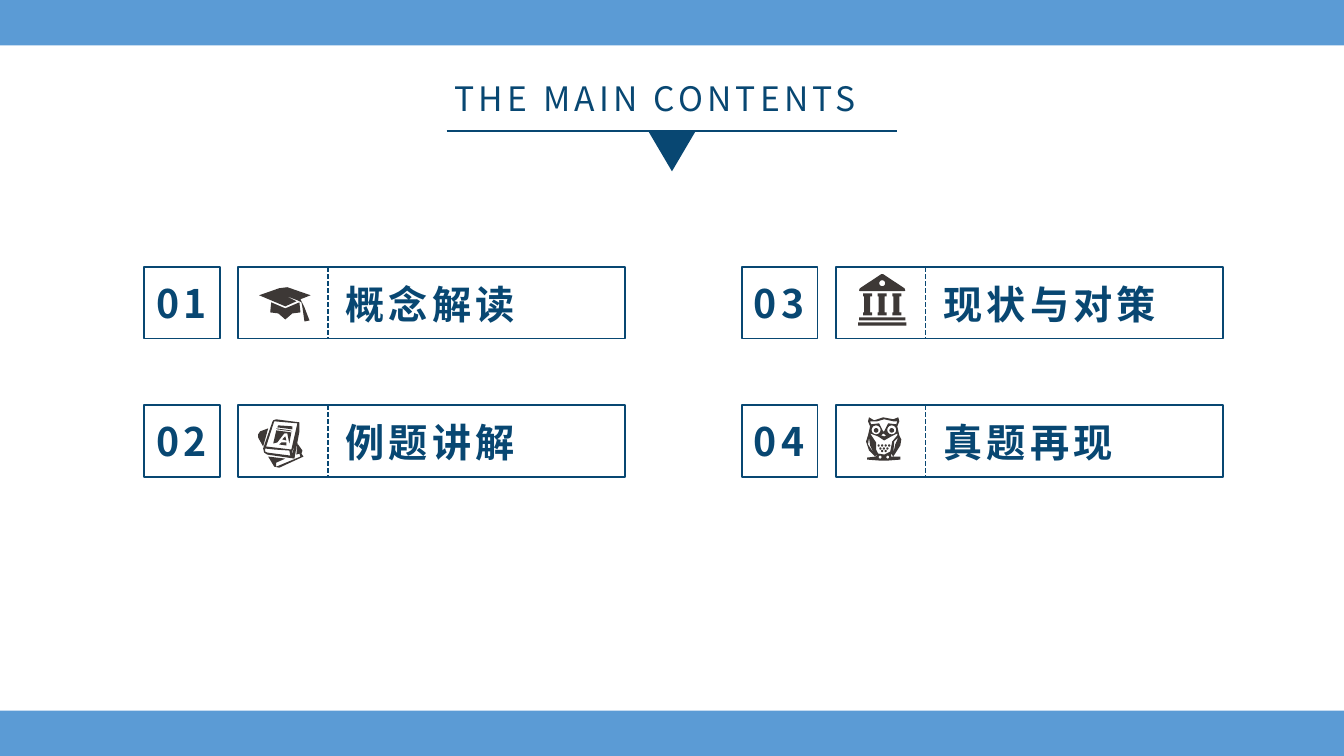
from dataclasses import dataclass
from math import cos, pi, sin

from lxml.etree import SubElement
from pptx import Presentation
from pptx.dml.color import RGBColor
from pptx.enum.dml import MSO_LINE
from pptx.enum.shapes import MSO_CONNECTOR, MSO_SHAPE
from pptx.enum.text import MSO_ANCHOR, MSO_AUTO_SIZE, PP_ALIGN
from pptx.oxml.ns import qn
from pptx.util import Inches, Pt


@dataclass(frozen=True)
class Theme:
    """Colours, font and sizes of the deck."""
    band: RGBColor = RGBColor.from_string("5B9BD5")
    navy: RGBColor = RGBColor.from_string("084772")
    icon: RGBColor = RGBColor.from_string("3D3836")
    font: str = "Noto Sans CJK SC"
    title_size: int = 24
    item_size: int = 28
    letter_spacing: int = 300
    rule: float = 1.5
    outline: float = 1.25


class Board:
    """Draws on one page divided into 100 columns and 100 rows."""

    def __init__(self, deck, page, theme):
        """Keep the page, its grid steps and its theme."""
        self.page, self.theme = page, theme
        self.column, self.row = deck.slide_width / 100, deck.slide_height / 100

    def place(self, *cells):
        """Turn alternating columns and rows into lengths."""
        steps = (self.column, self.row) * 2
        return [round(cell * step) for cell, step in zip(cells, steps)]

    def set_text(self, box, text, size, bold=False):
        """Put one styled line of text into a box."""
        frame = box.text_frame
        frame.word_wrap = True
        frame.auto_size = MSO_AUTO_SIZE.NONE
        frame.vertical_anchor = MSO_ANCHOR.TOP
        para = frame.paragraphs[0]
        para.alignment = PP_ALIGN.LEFT
        span = para.add_run()
        span.text = text
        for font in (para.font, span.font):
            font.name, font.size, font.bold = self.theme.font, Pt(size), bold
            font.color.rgb = self.theme.navy
        for properties in para._p.iter(qn("a:defRPr"), qn("a:rPr")):
            properties.set("spc", str(self.theme.letter_spacing))
            SubElement(properties, qn("a:ea"), typeface=self.theme.font)

    def title(self, text, *cells):
        """Place and fill the title placeholder."""
        box = self.page.shapes.title
        box.left, box.top, box.width, box.height = self.place(*cells)
        self.set_text(box, text, self.theme.title_size)

    def label(self, text, *cells):
        """Add a bold text box."""
        box = self.page.shapes.add_textbox(*self.place(*cells))
        self.set_text(box, text, self.theme.item_size, bold=True)

    def solid(self, kind, color, *cells):
        """Add a filled shape without an outline."""
        shape = self.page.shapes.add_shape(kind, *self.place(*cells))
        self.paint(shape, color)
        return shape

    def paint(self, shape, color):
        """Fill a shape and drop its line and shadow."""
        shape.shadow.inherit = False
        shape.fill.solid()
        shape.fill.fore_color.rgb = color
        shape.line.fill.background()

    def frame(self, *cells):
        """Add an outlined rectangle without a fill."""
        box = self.page.shapes.add_shape(MSO_SHAPE.RECTANGLE, *self.place(*cells))
        box.shadow.inherit = False
        box.fill.background()
        box.line.color.rgb = self.theme.navy
        box.line.width = Pt(self.theme.outline)

    def line(self, width, *cells, dash=None):
        """Add a straight line between two grid points."""
        line = self.page.shapes.add_connector(MSO_CONNECTOR.STRAIGHT, *self.place(*cells))
        line.line.color.rgb = self.theme.navy
        line.line.width = Pt(width)
        if dash:
            line.line.dash_style = dash
        SubElement(line._element.spPr, qn("a:effectLst"))

    def icon(self, contours, left, top):
        """Add an icon whose points are hundredths of an inch."""
        fine = [[(x * 10, y * 10) for x, y in contour] for contour in contours]
        builder = self.page.shapes.build_freeform(*fine[0][0], scale=Inches(1) / 1000)
        builder.add_line_segments(fine[0][1:])
        for contour in fine[1:]:
            builder.move_to(*contour[0])
            builder.add_line_segments(contour[1:])
        self.paint(builder.convert_to_shape(*self.place(left, top)), self.theme.icon)


def dot(x, y, radius):
    """Return a round contour."""
    return [(x + radius * cos(k * pi / 6), y + radius * sin(k * pi / 6)) for k in range(12)]


def bar(left, top, right, bottom):
    """Return a rectangular contour."""
    return [(left, top), (right, top), (right, bottom), (left, bottom)]


def pillar(x):
    """Return the contour of a column with its capital and foot."""
    profile = [(0, 19), (9, 19), (9, 22), (7, 22), (7, 38), (9, 38),
               (9, 41), (0, 41), (0, 38), (1, 38), (1, 22), (0, 22)]
    return [(x + across, down) for across, down in profile]


CAP = [
    [(20, 2), (28, 1), (51, 9), (41, 13), (45, 21), (50, 34), (45, 35), (43, 21),
     (42, 16), (38, 14), (25, 9), (37, 15), (26, 20), (0, 9)],
    [(12, 16), (11, 26), (19, 27), (26, 33), (33, 27), (41, 26), (40, 16), (26, 22)],
]
BOOKS = [
    [(15, 4), (16, 2), (19, 1), (42, 4), (42, 13), (37, 40), (10, 36), (7, 34), (6, 30)],
    [(17, 3), (9, 28), (34, 31), (40, 5)],
    [(37, 25), (35, 33), (35, 37)],
    [(8, 30), (8, 33), (10, 34), (33, 37), (32, 32), (17, 31)],
    [(21, 7), (20, 9), (35, 11), (35, 8)],
    [(19, 10), (20, 11), (35, 13), (33, 12)],
    [(1, 16), (1, 19), (6, 28), (11, 10), (3, 13)],
    [(16, 25), (20, 24), (27, 15), (30, 15), (32, 25), (34, 14), (19, 12)],
    [(28, 18), (25, 21), (29, 22)],
    [(22, 26), (29, 27), (29, 24), (24, 24)],
    [(40, 25), (39, 36), (42, 35), (43, 38), (19, 48), (19, 44), (28, 40),
     (11, 38), (17, 48), (22, 49), (46, 38), (44, 35), (45, 32)],
]
BANK = [
    bar(0, 48, 48, 51), bar(1, 43, 47, 46),
    [(1, 16), (2, 14), (23, 0), (25, 0), (46, 14), (47, 16), (46, 17), (2, 17)],
    dot(24, 9, 3), *[pillar(5 + 14.5 * k) for k in range(3)],
]
OWL = [
    [(4, 0), (9, 3), (18, 0), (28, 2), (33, 0), (34, 4), (32, 9), (34, 18), (36, 22),
     (35, 28), (28, 39), (26, 36), (26, 39), (35, 39), (35, 42), (22, 43), (15, 43),
     (2, 42), (2, 40), (11, 39), (12, 36), (10, 39), (4, 33), (1, 24), (3, 18), (5, 9), (3, 4)],
    [(5, 4), (6, 7), (14, 6), (18, 14), (19, 14), (23, 6), (31, 7), (32, 4),
     (28, 4), (19, 2), (12, 4)],
    [(16, 18), (19, 19), (21, 18), (18, 16)],
    [(26, 19), (19, 23), (13, 19), (5, 16), (7, 19), (11, 25), (11, 32), (13, 36),
     (19, 37), (25, 34), (27, 24), (32, 18), (32, 16)],
    [(3, 27), (9, 36), (5, 28), (4, 20)],
    [(29, 24), (28, 36), (30, 27), (33, 20)],
    *[dot(x, 12.5, 4.5) for x in (11, 26.5)],
    *[dot(x, 13, 2.3) for x in (11, 26.5)],
    *[dot(x, 39.5, 1.5) for x in (15, 22.5)],
    *[dot(18.75 + 3.5 * (k - (count - 1) / 2), y, 1.1)
      for count, y in ((4, 28), (3, 31), (2, 33.5)) for k in range(count)],
]
ITEMS = [
    ("概念解读", CAP, 8.55, 2.53),
    ("例题讲解", BOOKS, 8.4, 1.73),
    ("现状与对策", BANK, 8.63, 0.93),
    ("真题再现", OWL, 9.15, 1.6),
]


def main():
    """Build and save the contents page."""
    deck = Presentation()
    deck.slide_width, deck.slide_height = Inches(13.33), Inches(7.5)
    theme = Theme()
    board = Board(deck, deck.slides.add_slide(deck.slide_layouts[5]), theme)

    for top in (0, 94):
        board.solid(MSO_SHAPE.RECTANGLE, theme.band, 0, top, 100, 6)
    board.title("THE MAIN CONTENTS", 33.08, 9.6, 33.9, 6.8)
    board.line(theme.rule, 33.23, 17.33, 66.75, 17.33)
    pointer = board.solid(MSO_SHAPE.ISOSCELES_TRIANGLE, theme.navy, 48.23, 17.33, 3.53, 5.33)
    pointer.rotation = 180

    height = 9.47
    for index, (topic, contours, icon_left, icon_top) in enumerate(ITEMS):
        column, row = divmod(index, 2)
        left, top = 10.73 + 44.48 * column, 35.33 + 18.27 * row
        board.frame(left, top, 5.63, height)
        board.frame(left + 6.98, top, 28.8, height)
        board.label(f"{index + 1:02}", left + 0.15, top + 0.93, 7.28, 7.6)
        board.label(topic, left + 14.25, top + 1.07, 23.25, 7.6)
        board.icon(contours, left + icon_left, top + icon_top)
        divider = left + 13.65
        board.line(theme.outline, divider, top, divider, top + height, dash=MSO_LINE.SQUARE_DOT)
    deck.save("out.pptx")


if __name__ == "__main__":
    main()
